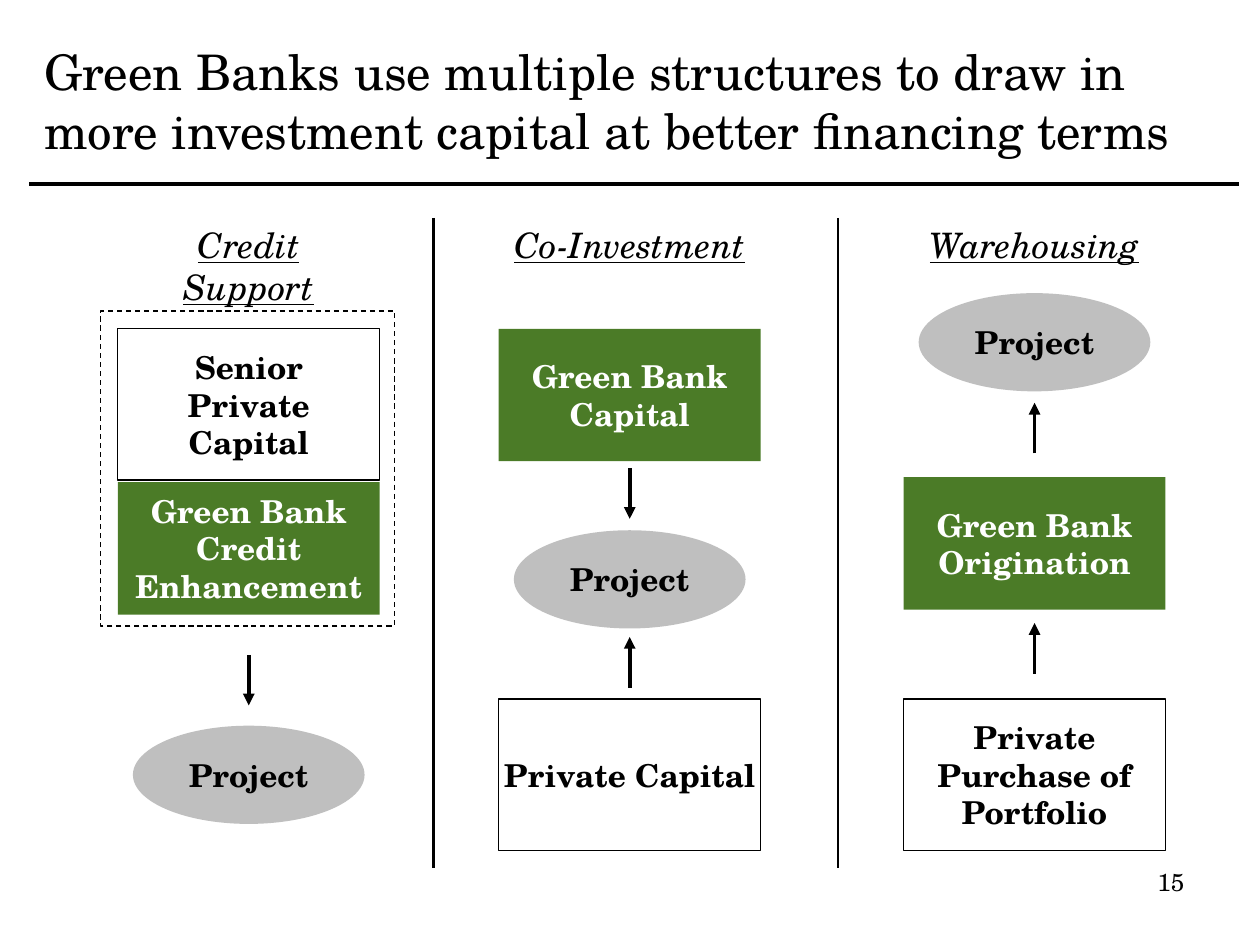
from lxml import etree
from pptx import Presentation
from pptx.dml.color import RGBColor
from pptx.enum.dml import MSO_LINE
from pptx.enum.shapes import MSO_CONNECTOR, MSO_SHAPE
from pptx.enum.text import MSO_ANCHOR, PP_ALIGN
from pptx.oxml.ns import qn
from pptx.util import Cm, Pt

RECT, OVAL = MSO_SHAPE.RECTANGLE, MSO_SHAPE.OVAL
STRAIGHT = MSO_CONNECTOR.STRAIGHT
DASH = MSO_LINE.DASH
TOP, MIDDLE = MSO_ANCHOR.TOP, MSO_ANCHOR.MIDDLE
LEFT, CENTER, RIGHT = PP_ALIGN.LEFT, PP_ALIGN.CENTER, PP_ALIGN.RIGHT

FONT = "TeX Gyre Schola"
BLACK, WHITE, GREEN, GRAY = "000000", "FFFFFF", "4B7B27", "BFBFBF"
ARROW = 1.02

# kind: preset, width, height, fill, line, text colour
BLOCKS = {
    "bank": (RECT, 5.28, 2.67, GREEN, None, WHITE),
    "private": (RECT, 5.28, 3.05, WHITE, BLACK, BLACK),
    "project": (OVAL, 4.67, 1.98, GRAY, None, BLACK),
}


def rgb(color):
    return RGBColor.from_string(color)


def write(s, text, size, color=BLACK, align=LEFT, anchor=TOP, wrap=True):
    tf = s.text_frame
    tf.word_wrap = wrap
    tf.vertical_anchor = anchor
    p = tf.paragraphs[0]
    p.text = text
    p.alignment = align
    p.font.name = FONT
    p.font.size = Pt(size)
    p.font.color.rgb = rgb(color)
    return p


def add_text(sp, box, text, size, **style):
    return write(sp.add_textbox(*map(Cm, box)), text, size, **style)


def add_shape(sp, preset, box, fill=None, line=None):
    s = sp.add_shape(preset, *map(Cm, box))
    s.shadow.inherit = False
    if fill:
        s.fill.solid()
        s.fill.fore_color.rgb = rgb(fill)
    else:
        s.fill.background()
    if line:
        s.line.color.rgb = rgb(line)
        s.line.width = Pt(0.75)
    else:
        s.line.fill.background()
    return s


def add_line(sp, x1, y1, x2, y2, width, arrow=False):
    s = sp.add_connector(STRAIGHT, *map(Cm, (x1, y1, x2, y2)))
    s.line.color.rgb = rgb(BLACK)
    s.line.width = Pt(width)
    if arrow:
        ln = s.line._get_or_add_ln()
        etree.SubElement(ln, qn("a:tailEnd"), type="triangle")
    etree.SubElement(s._element.spPr, qn("a:effectLst"))


def add_block(sp, kind, center, top, text):
    preset, w, h, fill, line, color = BLOCKS[kind]
    s = add_shape(sp, preset, (center - w / 2, top, w, h), fill, line)
    wrap = text not in ("Project", "Private Capital")
    p = write(s, text, 18, color, CENTER, MIDDLE, wrap)
    p.font.bold = True


def add_column(sp, left, top, width, heading, blocks, arrows):
    """Blocks are (kind, offset, text); arrows are (start offset, direction)."""
    center = left + width / 2
    p = add_text(sp, (left, top, width, 1.12), heading, 20, align=CENTER)
    p.font.italic = True
    p.font.underline = True
    for kind, offset, text in blocks:
        add_block(sp, kind, center, top + offset, text)
    for start, direction in arrows:
        y = top + start
        add_line(sp, center, y, center, y + direction * ARROW, 2.25, arrow=True)


def add_header(sp, left, top, width, height, text):
    add_text(sp, (left, top, width, height), text, 28, anchor=MIDDLE)
    rule = top + height + 0.1
    add_line(sp, left - 0.05, rule, left + width, rule, 2.25)


def add_structures(sp, top, height):
    width = 5.31
    add_column(sp, 2.36, top, width, "Credit Support", [
        ("private", 2.24, "Senior Private Capital"),
        ("bank", 5.33, "Green Bank Credit Enhancement"),
        ("project", 10.24, "Project"),
    ], [(8.81, 1)])
    frame = add_shape(sp, RECT, (2.03, top + 1.88, 5.93, 6.35), line=BLACK)
    frame.line.dash_style = DASH
    add_column(sp, 10.04, top, width, "Co-Investment", [
        ("bank", 2.24, "Green Bank Capital"),
        ("project", 6.3, "Project"),
        ("private", 9.7, "Private Capital"),
    ], [(5.05, 1), (9.47, -1)])
    add_column(sp, 18.2, top, width, "Warehousing", [
        ("project", 1.52, "Project"),
        ("bank", 5.23, "Green Bank Origination"),
        ("private", 9.7, "Private Purchase of Portfolio"),
    ], [(4.75, -1), (9.19, -1)])
    for x in (8.74, 16.89):
        add_line(sp, x, top, x, top + height, 1.5)


def main():
    prs = Presentation()
    prs.slide_width, prs.slide_height = Cm(25.4), Cm(19.05)
    sp = prs.slides.add_slide(prs.slide_layouts[6]).shapes
    add_header(sp, 0.64, 0.43, 24.33, 3.18,
               "Green Banks use multiple structures to draw in more "
               "investment capital at better financing terms")
    add_structures(sp, 4.39, 13.11)
    add_text(sp, (18.21, 17.35, 5.92, 1.32), "15", 14, align=RIGHT)
    prs.save("out.pptx")


if __name__ == "__main__":
    main()
